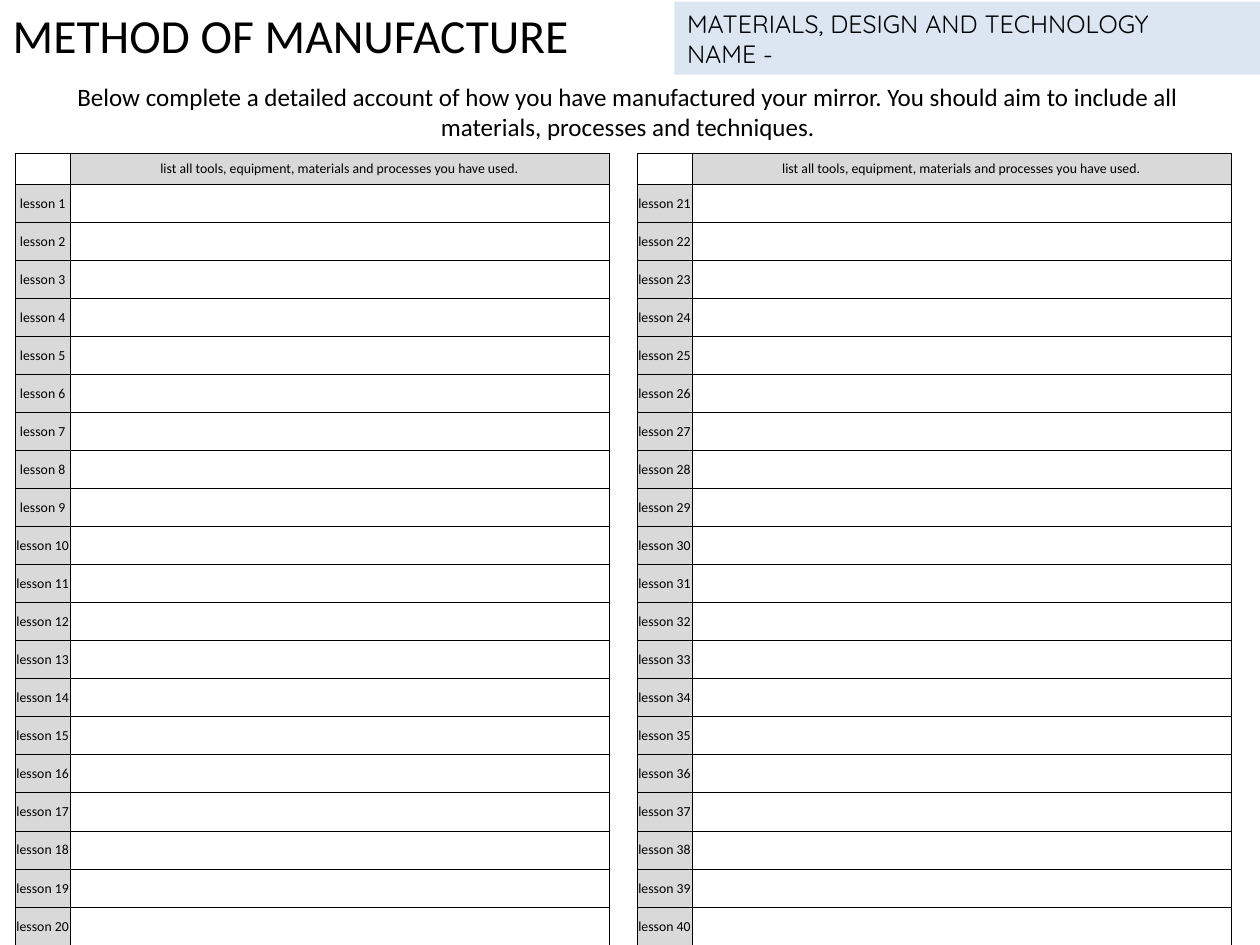
from dataclasses import dataclass

from pptx import Presentation
from pptx.dml.color import RGBColor
from pptx.enum import shapes, text
from pptx.oxml import parse_xml
from pptx.oxml.ns import nsdecls
from pptx.util import Cm, Pt


@dataclass(frozen=True)
class Theme:
    ink: str = "000000"
    band: str = "DCE6F2"
    grey: str = "D9D9D9"
    body: str = "Calibri"
    label: str = "Quicksand"
    title: int = 38
    lead: int = 20
    cell: int = 11
    rule: float = 0.5


THEME = Theme()
ROWS = 20
HEAD = 0.87
TALL = 22.35
COLS = (1.55, 15.21)
TOP = 4.32
PROMPT = "list all tools, equipment, materials and processes you have used."
BRIEF = (
    "Below complete a detailed account of how you have manufactured your mirror. "
    "You should aim to include all materials, processes and techniques."
)


def style(para, size, face, align):
    para.alignment = align
    para.font.size = Pt(size)
    para.font.name = face
    para.font.color.rgb = RGBColor.from_string(THEME.ink)


def write(shape, lines, size, face, align=text.PP_ALIGN.LEFT):
    frame = shape.text_frame
    frame.word_wrap = True
    frame.margin_left = frame.margin_right = Cm(0.36)
    frame.margin_top = frame.margin_bottom = Cm(0.18)
    frame.text = "\n".join(lines)
    for para in frame.paragraphs:
        style(para, size, face, align)


def add_text(slide, box, line, size, align=text.PP_ALIGN.LEFT):
    shape = slide.shapes.add_textbox(*map(Cm, box))
    write(shape, [line], size, THEME.body, align)


def add_band(slide, box, lines):
    shape = slide.shapes.add_shape(shapes.MSO_SHAPE.RECTANGLE, *map(Cm, box))
    shape.shadow.inherit = False
    shape.fill.solid()
    shape.fill.fore_color.rgb = RGBColor.from_string(THEME.band)
    shape.line.fill.background()
    write(shape, lines, THEME.lead, THEME.label)
    shape.text_frame.vertical_anchor = text.MSO_ANCHOR.MIDDLE


def add_edges(cell):
    props = cell._tc.get_or_add_tcPr()
    for side in "LRTB":
        props.append(parse_xml(
            f'<a:ln{side} {nsdecls("a")} w="{Pt(THEME.rule)}"><a:solidFill>'
            f'<a:srgbClr val="{THEME.ink}"/></a:solidFill></a:ln{side}>'
        ))


def fill_cell(cell, words):
    add_edges(cell)
    cell.margin_left = cell.margin_right = cell.margin_top = Cm(0.02)
    cell.margin_bottom = Cm(0)
    cell.vertical_anchor = text.MSO_ANCHOR.MIDDLE
    cell.text = words
    style(cell.text_frame.paragraphs[0], THEME.cell, THEME.body, text.PP_ALIGN.CENTER)
    if words:
        cell.fill.solid()
        cell.fill.fore_color.rgb = RGBColor.from_string(THEME.grey)
    else:
        cell.fill.background()


def add_log(slide, left, first):
    box = map(Cm, (left, TOP, sum(COLS), TALL))
    table = slide.shapes.add_table(ROWS + 1, len(COLS), *box).table
    table.first_row = table.horz_banding = False
    for col, width in zip(table.columns, COLS):
        col.width = Cm(width)
    for row in table.rows:
        row.height = Cm((TALL - HEAD) / ROWS)
    table.rows[0].height = Cm(HEAD)
    grid = [("", PROMPT)] + [(f"lesson {first + i}", "") for i in range(ROWS)]
    for row, pair in zip(table.rows, grid):
        for cell, words in zip(row.cells, pair):
            fill_cell(cell, words)


def main():
    deck = Presentation()
    deck.slide_width, deck.slide_height = Cm(35.56), Cm(26.67)
    slide = deck.slides.add_slide(deck.slide_layouts[6])
    add_text(slide, (0, 0, 23.19, 1.98), "METHOD OF MANUFACTURE", THEME.title)
    add_band(slide, (19.03, 0.05, 16.53, 2.06),
             ["MATERIALS, DESIGN AND TECHNOLOGY", "NAME -"])
    add_text(slide, (0.43, 2.11, 34.57, 2.06), BRIEF, THEME.lead, text.PP_ALIGN.CENTER)
    for side, left in enumerate((0.43, 17.98)):
        add_log(slide, left, 1 + side * ROWS)
    deck.save("out.pptx")


if __name__ == "__main__":
    main()
